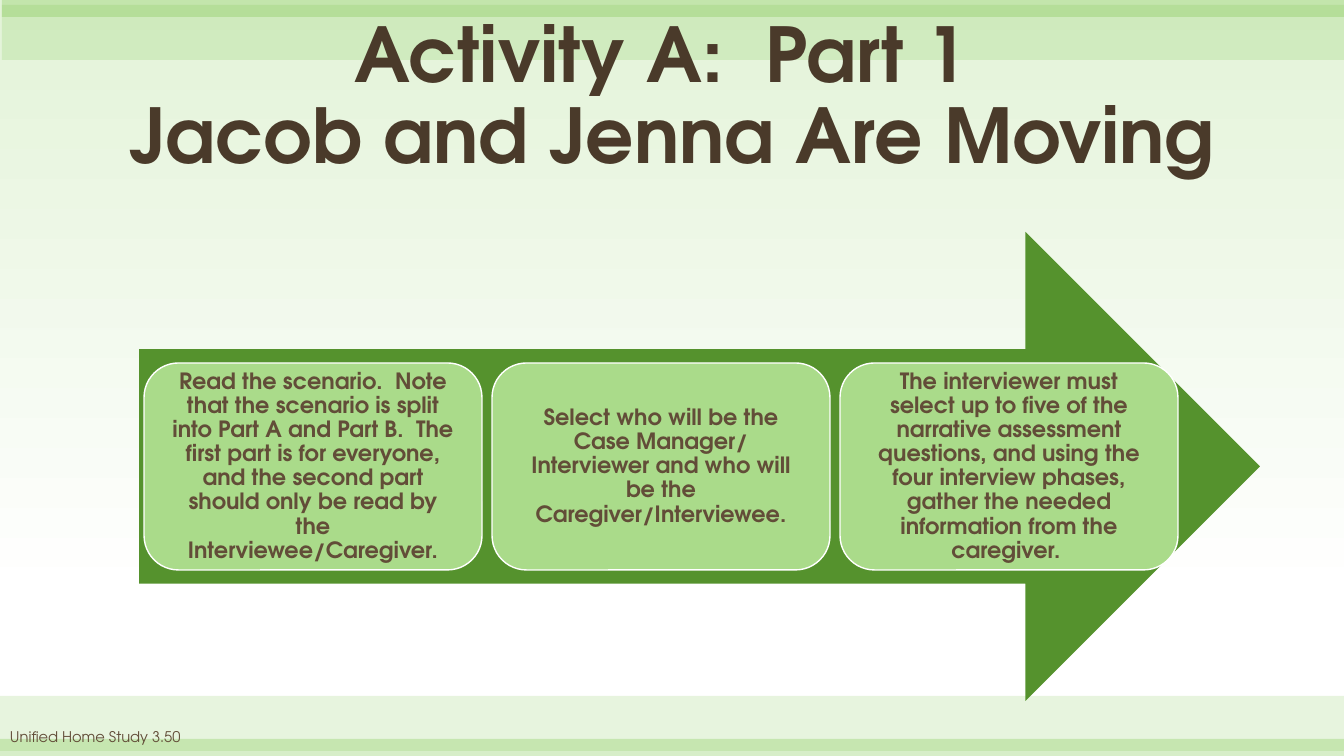
from lxml.etree import SubElement
from pptx import Presentation
from pptx.dml.color import RGBColor
from pptx.enum.shapes import MSO_SHAPE as Shape
from pptx.enum.text import MSO_ANCHOR as Anchor, PP_ALIGN as Align
from pptx.oxml.ns import qn
from pptx.util import Emu, Pt

# Content
TITLE = ["Activity A:  Part 1 ", "Jacob and Jenna Are Moving"]
STEPS = [
    "Read the scenario.  Note that the scenario is split into Part A and Part B.  "
    "The first part is for everyone, and the second part should only be read by "
    "the Interviewee/Caregiver.",
    "Select who will be the Case Manager/ Interviewer and who will be the "
    "Caregiver/Interviewee.",
    "The interviewer must select up to five of the narrative assessment questions, "
    "and using the four interview phases, gather the needed information from the "
    "caregiver. ",
]
FOOTER = "Unified Home Study 3.50"

# Style
FONT = "TeX Gyre Adventor"
COLORS = {
    "sky": "E3F3D8", "white": "FFFFFF", "band": "72C23C", "arrow": "55922D",
    "step": "AADB8A", "title": "4A3A2A", "body": "624D38",
}

# Layout in px: left, top, width, height
PX = 914400 / 100.8
WIDTH, HEIGHT = 1344, 756
BANDS = [  # with opacity in percent
    ((0, 696, WIDTH, 55), 17),
    ((0, 739, WIDTH, 17), 28),
    ((2, 5, WIDTH - 2, 55), 17),
    ((2, 0, WIDTH - 2, 17), 28),
]
TITLE_AREA = (0, 9, WIDTH, 176)
ARROW_AREA = (139, 232, 1121, 469)
FOOTER_AREA = (0, 723, 301, 33)
STEP_LEFT, STEP_WIDTH, STEP_HEIGHT, STEP_GAP = 144, 338, 207, 10
STEP_INSET = 18


def px(value):
    return Emu(round(value * PX))


def color(name):
    return RGBColor.from_string(COLORS[name])


def add_block(page, kind, area, fill, opacity=100):
    block = page.shapes.add_shape(kind, *map(px, area))
    block.shadow.inherit = False
    block.fill.solid()
    block.fill.fore_color.rgb = color(fill)
    block.line.fill.background()
    if opacity < 100:
        tint = block.fill._xPr.find(qn("a:solidFill"))[0]
        SubElement(tint, qn("a:alpha"), val=str(opacity * 1000))
    return block


def write(box, lines, size, ink, bold=True, align=Align.CENTER, spacing=0.9,
          anchor=Anchor.MIDDLE):
    frame = box.text_frame
    frame.word_wrap = True
    frame.vertical_anchor = anchor
    para = frame.paragraphs[0]
    para.alignment = align
    para.line_spacing = spacing
    para.font.name = FONT
    para.font.size = Pt(size)
    para.font.bold = bold
    para.font.color.rgb = color(ink)
    for index, line in enumerate(lines):
        if index:
            para.add_line_break()
        para.add_run().text = line


def main():
    deck = Presentation()
    deck.slide_width, deck.slide_height = px(WIDTH), px(HEIGHT)
    page = deck.slides.add_slide(deck.slide_layouts[6])

    # Background fading from green to white
    backdrop = page.background.fill
    backdrop.gradient()
    backdrop.gradient_angle = 270
    for stop, (position, name) in zip(backdrop.gradient_stops,
                                      [(0, "sky"), (0.79, "white")]):
        stop.position = position
        stop.color.rgb = color(name)

    # Bands along the top and bottom edges
    for area, opacity in BANDS:
        add_block(page, Shape.RECTANGLE, area, "band", opacity)

    # Title
    title = page.shapes.add_textbox(*map(px, TITLE_AREA))
    write(title, TITLE, 54, "title", anchor=Anchor.BOTTOM)

    # Arrow with the steps centred on its height
    add_block(page, Shape.RIGHT_ARROW, ARROW_AREA, "arrow")
    step_top = ARROW_AREA[1] + (ARROW_AREA[3] - STEP_HEIGHT) / 2
    for index, text in enumerate(STEPS):
        left = STEP_LEFT + index * (STEP_WIDTH + STEP_GAP)
        step = add_block(page, Shape.ROUNDED_RECTANGLE,
                         (left, step_top, STEP_WIDTH, STEP_HEIGHT), "step")
        step.line.color.rgb = color("white")
        step.line.width = Pt(1)
        frame = step.text_frame
        frame.margin_left = frame.margin_right = px(STEP_INSET)
        frame.margin_top = frame.margin_bottom = px(STEP_INSET)
        write(step, [text], 16, "body")

    # Footer
    footer = page.shapes.add_textbox(*map(px, FOOTER_AREA))
    write(footer, [FOOTER], 10.5, "body", bold=False, align=Align.LEFT,
          spacing=1, anchor=Anchor.TOP)

    deck.save("out.pptx")


if __name__ == "__main__":
    main()
